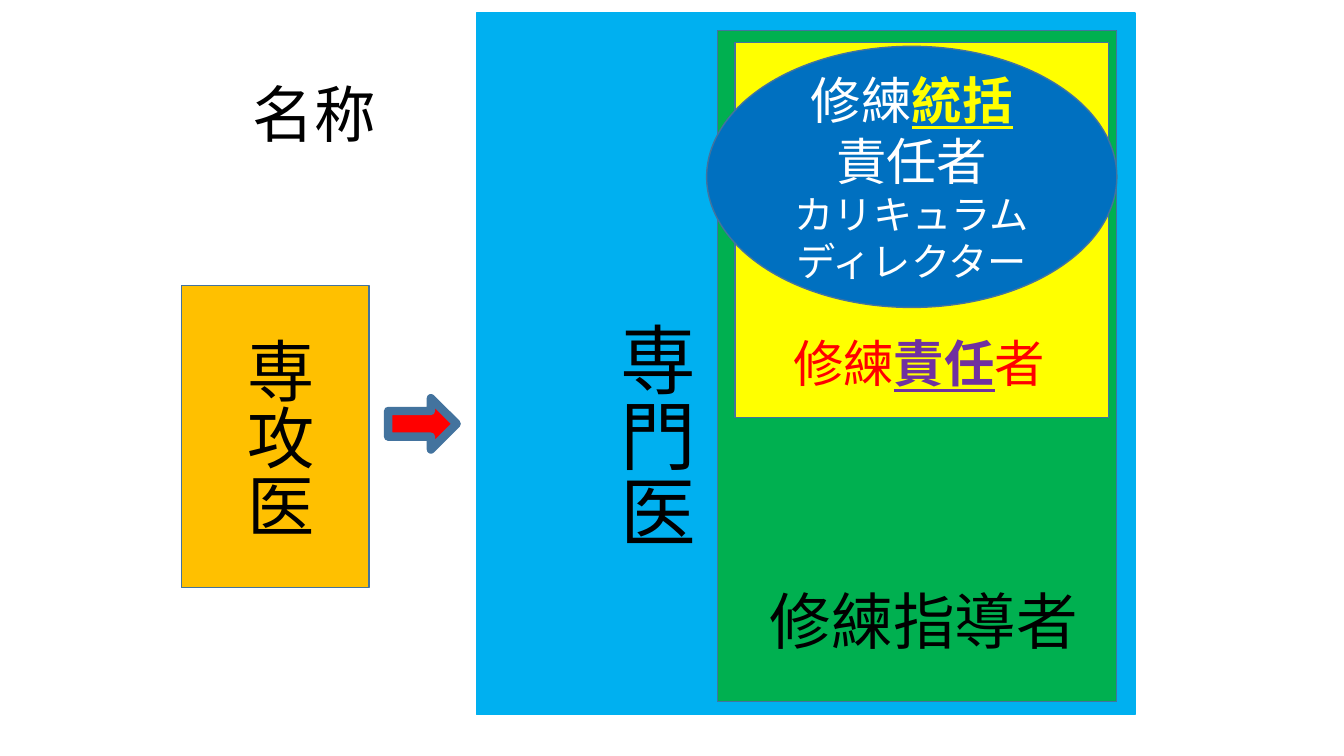
from pptx import Presentation
from pptx.dml.color import RGBColor
from pptx.enum.shapes import MSO_SHAPE
from pptx.enum.text import MSO_ANCHOR, MSO_AUTO_SIZE, PP_ALIGN
from pptx.util import Inches, Pt

RECT = MSO_SHAPE.RECTANGLE
OVAL = MSO_SHAPE.OVAL
ARROW = MSO_SHAPE.RIGHT_ARROW
MIDDLE = MSO_ANCHOR.MIDDLE
CENTER = PP_ALIGN.CENTER
GROW = MSO_AUTO_SIZE.SHAPE_TO_FIT_TEXT

COLS, ROWS = 160, 90
WIDTH, HEIGHT = Inches(13.33), Inches(7.5)
FONT = "Calibri"
COLORS = {
    "black": "000000", "white": "FFFFFF", "red": "FF0000",
    "purple": "7030A0", "yellow": "FFFF00", "amber": "FFC000",
    "sky": "00B0F0", "green": "00B050", "blue": "0070C0", "edge": "43739E",
}


def color(name):
    return RGBColor.from_string(COLORS[name])


def inner(box, left, top, width, height):
    return box[0] + left, box[1] + top, width, height


def frame(box):
    left, top, width, height = box
    col, row = WIDTH / COLS, HEIGHT / ROWS
    return [round(n) for n in (left * col, top * row, width * col, height * row)]


def block(slide, kind, box, fill, line="edge", weight=1):
    shape = slide.shapes.add_shape(kind, *frame(box))
    shape.shadow.inherit = False
    shape.fill.solid()
    shape.fill.fore_color.rgb = color(fill)
    shape.line.color.rgb = color(line)
    shape.line.width = Pt(weight)
    return shape


def write(para, parts, size):
    for text, tint, strong in parts:
        run = para.add_run()
        run.text = text
        font = run.font
        font.name, font.size = FONT, Pt(size)
        font.bold = font.underline = strong
        font.color.rgb = color(tint)


def label(slide, box, parts, size, upright=False):
    shape = slide.shapes.add_textbox(*frame(box))
    text = shape.text_frame
    text.word_wrap = False
    text.auto_size = GROW
    if upright:
        text._txBody.bodyPr.set("vert", "eaVert")
    write(text.paragraphs[0], parts, size)


def title(slide, box):
    text = slide.shapes.add_textbox(*frame(box)).text_frame
    text.word_wrap = True
    text.vertical_anchor = MIDDLE
    para = text.paragraphs[0]
    para.alignment = CENTER
    para.line_spacing = 0.9
    write(para, [("名称", "black", False)], 44)


def trainee(slide, box):
    block(slide, RECT, box, "amber")
    label(slide, inner(box, 4.8, 5.04, 12.12, 25.44),
          [("専攻医", "black", False)], 48, True)


def expert(slide, box):
    block(slide, RECT, box, "sky", "sky")
    label(slide, inner(box, 13.92, 35.64, 13.32, 28.44),
          [("専門医", "black", False)], 54, True)
    mentor(slide, inner(box, 28.68, 2.04, 47.52, 79.92))


def mentor(slide, box):
    block(slide, RECT, box, "green")
    manager(slide, inner(box, 2.04, 1.44, 44.52, 44.64))
    label(slide, inner(box, 5.04, 65.16, 39.48, 10.08),
          [("修練指導者", "black", False)], 44)


def manager(slide, box):
    block(slide, RECT, box, "yellow")
    label(slide, inner(box, 5.76, 33.96, 32.76, 15.72),
          [("修練", "red", False), ("責任", "purple", True),
           ("者", "red", False)], 36)
    director(slide, inner(box, -3.36, 0.48, 48.84, 31.08))


def director(slide, box):
    text = block(slide, OVAL, box, "blue").text_frame
    text.word_wrap = True
    text.vertical_anchor = MIDDLE
    lines = [
        ([("修練", "white", False), ("統括", "yellow", True)], 36),
        ([("責任者", "white", False)], 36),
        ([("カリキュラムディレクター", "white", False)], 28),
    ]
    for i, (parts, size) in enumerate(lines):
        para = text.add_paragraph() if i else text.paragraphs[0]
        para.alignment = CENTER
        write(para, parts, size)


def main():
    deck = Presentation()
    deck.slide_width, deck.slide_height = WIDTH, HEIGHT
    slide = deck.slides.add_slide(deck.slide_layouts[6])
    title(slide, (-14.28, 5.28, 103.44, 17.4))
    trainee(slide, (21.6, 33.96, 22.32, 36))
    expert(slide, (56.76, 1.56, 78.36, 83.52))
    block(slide, ARROW, (46.2, 47.4, 8.16, 6.12), "red", weight=6)
    deck.save("out.pptx")


if __name__ == "__main__":
    main()
